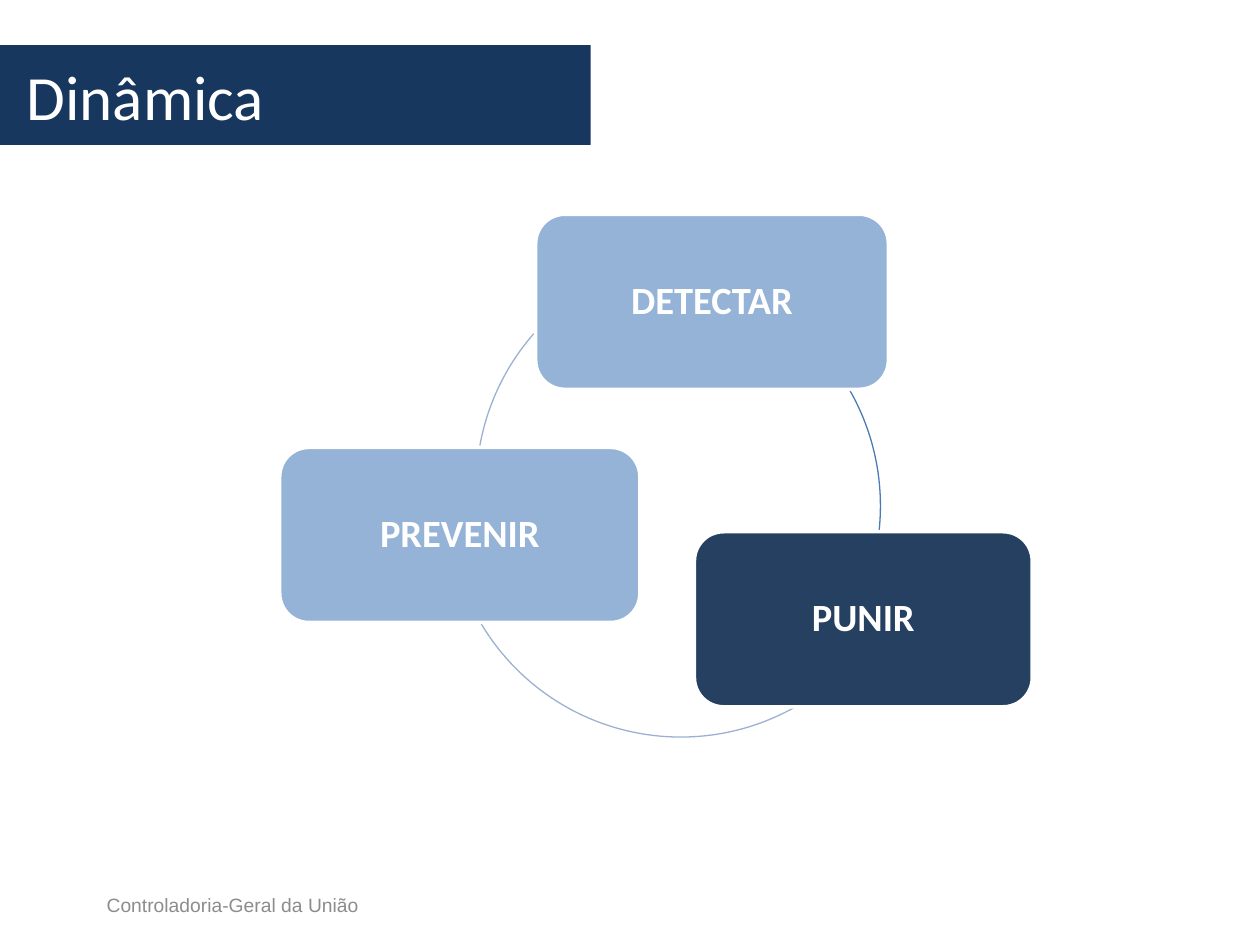
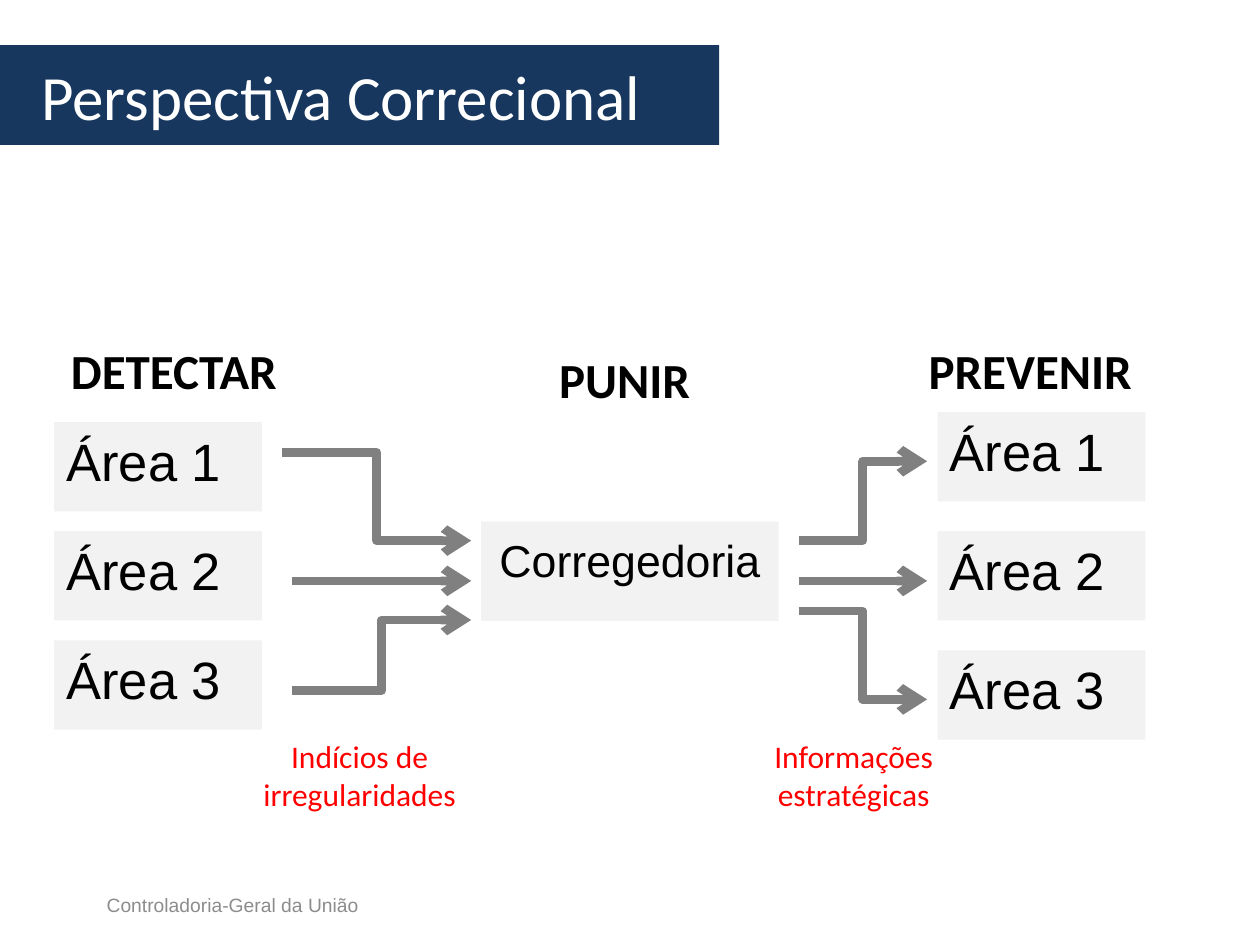
from lxml import etree
from pptx import Presentation
from pptx.dml.color import RGBColor
from pptx.enum.shapes import MSO_CONNECTOR as CONNECTOR, MSO_SHAPE as SHAPE
from pptx.enum.text import MSO_ANCHOR as ANCHOR, PP_ALIGN as ALIGN
from pptx.oxml.ns import qn
from pptx.util import Cm, Pt

COLORS = {
    "band": "17375E",
    "white": "FFFFFF",
    "black": "000000",
    "footer": "8C8C8C",
    "light_blue": "95B3D7",
    "dark_blue": "254061",
    "arc": "9CB1D1",
    "strong_arc": "4B7BB5",
    "area": "F2F2F2",
    "arrow": "808080",
    "note": "FF0000",
}
SLIDE_WIDTH, SLIDE_HEIGHT = 25.4, 19.05


def color(name):
    return RGBColor.from_string(COLORS[name])


def write(shape, text, size=18, font="Calibri", ink="black", bold=False,
          align=ALIGN.LEFT, anchor=ANCHOR.TOP, left=0.25, top=0.13, spacing=1.0):
    """Put one formatted paragraph in the shape; left and top are insets in cm."""
    frame = shape.text_frame
    frame.word_wrap = True
    frame.vertical_anchor = anchor
    frame.margin_left, frame.margin_top = Cm(left), Cm(top)
    paragraph = frame.paragraphs[0]
    paragraph.alignment = align
    paragraph.line_spacing = spacing
    run = paragraph.add_run()
    run.text = text
    run.font.size, run.font.name, run.font.bold = Pt(size), font, bold
    run.font.color.rgb = color(ink)


def add_text(slide, box, text, **text_format):
    write(slide.shapes.add_textbox(*map(Cm, box)), text, **text_format)


def add_box(slide, kind, box, fill, text, outline=None, **text_format):
    shape = slide.shapes.add_shape(kind, *map(Cm, box))
    shape.shadow.inherit = False
    shape.fill.solid()
    shape.fill.fore_color.rgb = color(fill)
    if outline:
        shape.line.color.rgb = color(outline)
        shape.line.width = Pt(2)
    else:
        shape.line.fill.background()
    write(shape, text, **text_format)


def add_arc(slide, left, top, diameter, start, end, line):
    """Draw an arc clockwise between two angles in degrees."""
    arc = slide.shapes.add_shape(SHAPE.ARC, Cm(left), Cm(top), Cm(diameter), Cm(diameter))
    arc.shadow.inherit = False
    arc.fill.background()
    arc.line.color.rgb = color(line)
    arc.line.width = Pt(0.75)
    # Adjustments count 60000ths of a degree, divided by 100000.
    arc.adjustments[0], arc.adjustments[1] = start * 0.6, end * 0.6


def add_arrow(slide, start_x, start_y, end_x, end_y):
    kind = CONNECTOR.STRAIGHT if start_y == end_y else CONNECTOR.ELBOW
    arrow = slide.shapes.add_connector(kind, *map(Cm, (start_x, start_y, end_x, end_y)))
    arrow.line.color.rgb = color("arrow")
    arrow.line.width = Pt(5)
    properties = arrow._element.spPr
    etree.SubElement(arrow.line._get_or_add_ln(), qn("a:tailEnd"), type="arrow")
    etree.SubElement(properties, qn("a:effectLst"))


def add_frame(presentation, title, band_width, indent):
    """Add a slide with the title band and the footer."""
    slide = presentation.slides.add_slide(presentation.slide_layouts[6])
    add_text(slide, (1.9, 17.63, 21.9, 1.22), "Controladoria-Geral da União",
             size=11, font="Arial", ink="footer", anchor=ANCHOR.MIDDLE)
    add_box(slide, SHAPE.RECTANGLE, (0, 0.91, band_width, 2.01), "band", title,
            size=36, ink="white", anchor=ANCHOR.MIDDLE, left=indent)
    return slide


def add_cycle(slide, left, top):
    diameter = 9.37
    arcs = [
        (2.74, 1.19, 330.3, 6, "strong_arc"),
        (3.4, 1.17, 61, 149.2, "arc"),
        (3.96, 0.81, 190.2, 221.3, "arc"),
    ]
    for x, y, start, end, line in arcs:
        add_arc(slide, left + x, top + y, diameter, start, end, line)
    steps = [
        ("DETECTAR", 5.16, 0, 7.11, "light_blue"),
        ("PUNIR", 8.36, 6.4, 6.81, "dark_blue"),
        ("PREVENIR", 0, 4.7, 7.26, "light_blue"),
    ]
    for text, x, y, width, fill in steps:
        add_box(slide, SHAPE.ROUNDED_RECTANGLE, (left + x, top + y, width, 3.53),
                fill, text, outline="white", size=22, ink="white", bold=True,
                align=ALIGN.CENTER, anchor=ANCHOR.MIDDLE, spacing=0.9)


def add_heading(slide, box, text):
    add_text(slide, box, text, size=28, bold=True, align=ALIGN.CENTER,
             anchor=ANCHOR.MIDDLE, spacing=0.9)


def add_areas(slide, left, top, pitch):
    for index in range(3):
        add_box(slide, SHAPE.RECTANGLE, (left, top + index * pitch, 4.19, 1.8),
                "area", f"Área {index + 1}", size=30, font="Arial")


def add_flow(slide, left, top):
    """Draw the areas, the central unit and the arrows between them."""
    add_heading(slide, (left - 0.38, top - 1.78, 5.59, 1.98), "DETECTAR")
    add_heading(slide, (left + 8.82, top - 1.58, 5.36, 1.98), "PUNIR")
    add_heading(slide, (left + 16.82, top - 1.78, 5.72, 1.98), "PREVENIR")
    add_areas(slide, left, top + 0.2, 2.2)
    add_areas(slide, left + 17.81, top, 2.4)
    add_box(slide, SHAPE.RECTANGLE, (left + 8.61, top + 2.2, 6, 2.01), "area",
            "Corregedoria", size=25.5, font="Arial", align=ALIGN.CENTER, top=0.23)
    arrows = [
        (4.6, 0.81, 8.41, 2.59),
        (4.8, 3.4, 8.41, 3.4),
        (4.8, 5.61, 8.41, 4.19),
        (15.01, 2.59, 17.6, 0.99),
        (15.01, 3.4, 17.6, 3.4),
        (15.01, 4.01, 17.6, 5.79),
    ]
    for start_x, start_y, end_x, end_y in arrows:
        add_arrow(slide, left + start_x, top + start_y, left + end_x, top + end_y)
    notes = [(3.86, "Indícios de irregularidades"), (13.82, "Informações estratégicas")]
    for x, text in notes:
        add_text(slide, (left + x, top + 6.42, 4.6, 1.8), text, ink="note",
                 align=ALIGN.CENTER)


def main():
    presentation = Presentation()
    presentation.slide_width, presentation.slide_height = Cm(SLIDE_WIDTH), Cm(SLIDE_HEIGHT)
    add_cycle(add_frame(presentation, "Dinâmica", 11.91, 0.54), 5.64, 4.32)
    add_flow(add_frame(presentation, "Perspectiva Correcional", 14.5, 0.83), 1.09, 8.31)
    presentation.save("out.pptx")


if __name__ == "__main__":
    main()
